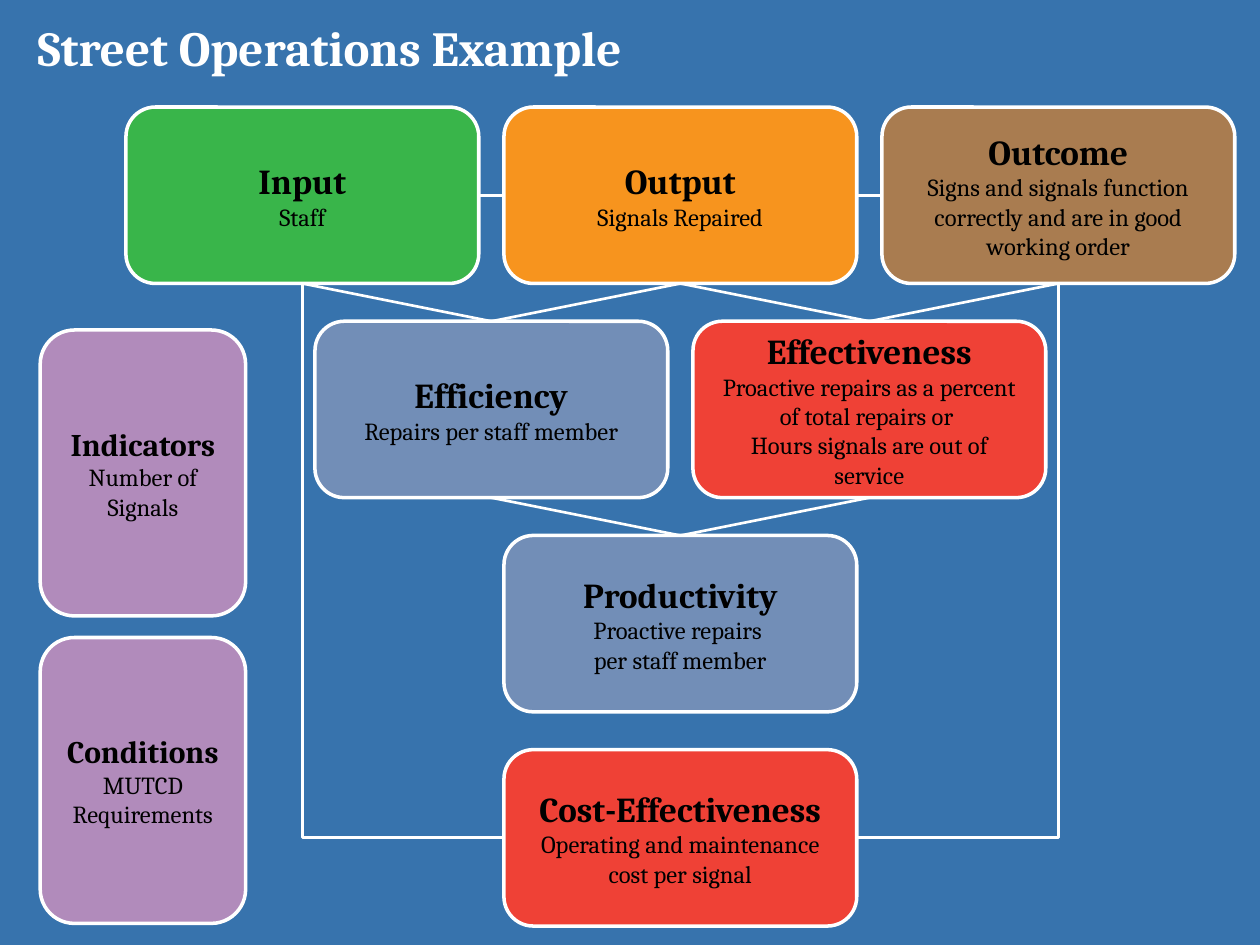
from lxml import etree
from pptx import Presentation
from pptx.dml.color import RGBColor
from pptx.enum.shapes import MSO_CONNECTOR, MSO_SHAPE
from pptx.enum.text import MSO_ANCHOR, PP_ALIGN
from pptx.oxml.ns import qn
from pptx.util import Pt

ROUNDED = MSO_SHAPE.ROUNDED_RECTANGLE
STRAIGHT, ELBOW = MSO_CONNECTOR.STRAIGHT, MSO_CONNECTOR.ELBOW
MIDDLE = MSO_ANCHOR.MIDDLE
LEFT, CENTER = PP_ALIGN.LEFT, PP_ALIGN.CENTER
TOP_SIDE, LEFT_SIDE, BOTTOM_SIDE, RIGHT_SIDE = range(4)

COLORS = {
    "background": "3773AD", "white": "FFFFFF", "black": "000000",
    "green": "39B54A", "orange": "F7941E", "brown": "A97C50",
    "blue": "728EB7", "red": "EF4136", "purple": "B18BBB",
}


class Deck:
    font = "Cambria"
    body_size = 14
    box_line = 2
    link_line = 1.5

    def __init__(self, width, height):
        self.prs = Presentation()
        self.prs.slide_width, self.prs.slide_height = Pt(width), Pt(height)

    def color(self, name):
        return RGBColor.from_string(COLORS[name])

    def add_slide(self, background):
        self.s = self.prs.slides.add_slide(self.prs.slide_layouts[6])
        fill = self.s.background.fill
        fill.solid()
        fill.fore_color.rgb = self.color(background)

    def style_line(self, line, width):
        line.color.rgb = self.color("white")
        line.width = Pt(width)

    def paragraph(self, p, text, align, color, **fmt):
        p.alignment = align
        r = p.add_run()
        r.text = text
        r.font.color.rgb = self.color(color)
        for name, value in {"name": self.font, **fmt}.items():
            setattr(r.font, name, value)

    def title(self, text, x, y, w, h, size):
        sp = self.s.shapes.add_textbox(Pt(x), Pt(y), Pt(w), Pt(h))
        tf = sp.text_frame
        tf.word_wrap, tf.vertical_anchor = True, MIDDLE
        self.paragraph(tf.paragraphs[0], text, LEFT, "white",
                       size=Pt(size), bold=True)

    def box(self, x, y, w, h, fill, heading, lines, size=20):
        sp = self.s.shapes.add_shape(ROUNDED, Pt(x), Pt(y), Pt(w), Pt(h))
        sp.shadow.inherit = False
        sp.fill.solid()
        sp.fill.fore_color.rgb = self.color(fill)
        self.style_line(sp.line, self.box_line)
        tf = sp.text_frame
        tf.word_wrap, tf.vertical_anchor = True, MIDDLE
        self.paragraph(tf.paragraphs[0], heading, CENTER, "black",
                       size=Pt(size), bold=True)
        for line in lines:
            self.paragraph(tf.add_paragraph(), line, CENTER, "black",
                           size=Pt(self.body_size), bold=False)
        return sp

    def link(self, start, start_side, end, end_side, kind=STRAIGHT):
        c = self.s.shapes.add_connector(kind, 0, 0, 0, 0)
        c.begin_connect(start, start_side)
        c.end_connect(end, end_side)
        self.style_line(c.line, self.link_line)
        props = c._element.spPr
        if kind == ELBOW:  # one bend only
            props.find(qn("a:prstGeom")).set("prst", "bentConnector2")
        etree.SubElement(props, qn("a:effectLst"))


def main():
    deck = Deck(720, 540)
    deck.add_slide("background")

    # Measures: column (in half steps), row, fill, heading, lines
    measures = [
        (0, 0, "green", "Input", ["Staff"]),
        (2, 0, "orange", "Output", ["Signals Repaired"]),
        (4, 0, "brown", "Outcome",
         ["Signs and signals function correctly and are in good working order"]),
        (1, 1, "blue", "Efficiency", ["Repairs per staff member"]),
        (2, 2, "blue", "Productivity", ["Proactive repairs ", "per staff member"]),
        (3, 1, "red", "Effectiveness",
         ["Proactive repairs as a percent of total repairs or ",
          "Hours signals are out of service"]),
        (2, 3, "red", "Cost-Effectiveness",
         ["Operating and maintenance cost per signal"]),
    ]
    boxes = {}
    for col, row, fill, heading, lines in measures:
        boxes[heading] = deck.box(72 + 108 * col, 61.2 + 122.4 * row,
                                  201.6, 100.8, fill, heading, lines)

    # Title
    deck.title("Street Operations Example", 14.4, 0, 648, 54, 28)

    # Links from each row down to the next
    for upper, lower in [("Input", "Efficiency"), ("Output", "Efficiency"),
                         ("Output", "Effectiveness"), ("Outcome", "Effectiveness"),
                         ("Efficiency", "Productivity"),
                         ("Effectiveness", "Productivity")]:
        deck.link(boxes[upper], BOTTOM_SIDE, boxes[lower], TOP_SIDE)

    # Bent links from the cost box up to the outer measures
    for side, upper in [(RIGHT_SIDE, "Outcome"), (LEFT_SIDE, "Input")]:
        deck.link(boxes["Cost-Effectiveness"], side,
                  boxes[upper], BOTTOM_SIDE, ELBOW)

    # Links along the top row
    for left, right in [("Input", "Output"), ("Output", "Outcome")]:
        deck.link(boxes[left], RIGHT_SIDE, boxes[right], LEFT_SIDE)

    # Side boxes
    side_boxes = [("Indicators", "Number of Signals"),
                  ("Conditions", "MUTCD Requirements")]
    for i, (heading, line) in enumerate(side_boxes):
        deck.box(23, 188.6 + 175.7 * i, 117.4, 163.4, "purple",
                 heading, [line], size=18)

    deck.prs.save("out.pptx")


if __name__ == "__main__":
    main()
